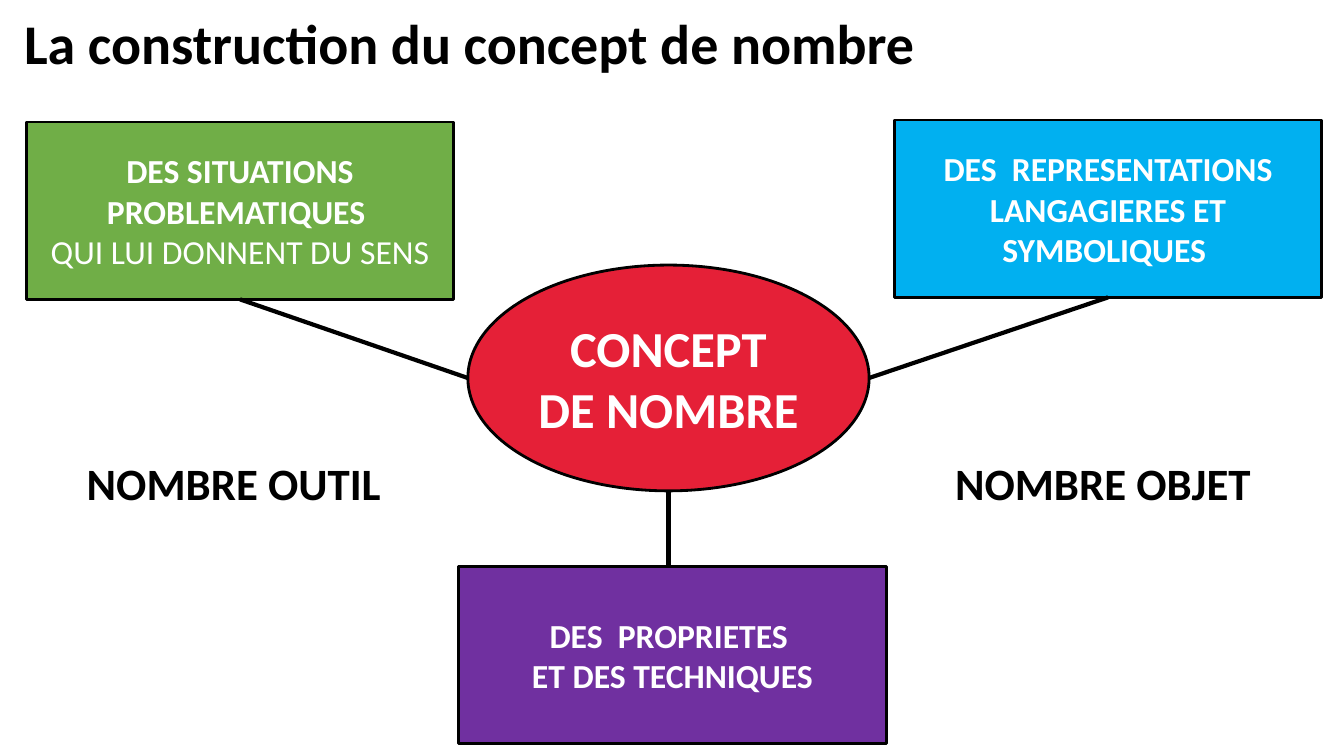
from lxml import etree
from pptx import Presentation
from pptx.dml.color import RGBColor
from pptx.enum.shapes import MSO_CONNECTOR, MSO_SHAPE
from pptx.enum.text import MSO_ANCHOR, PP_ALIGN
from pptx.oxml.ns import qn
from pptx.util import Inches, Pt

BLACK = RGBColor(0x00, 0x00, 0x00)
WHITE = RGBColor(0xFF, 0xFF, 0xFF)
RED = RGBColor(0xE5, 0x20, 0x37)
GREEN = RGBColor(0x70, 0xAE, 0x47)
BLUE = RGBColor(0x01, 0xB0, 0xF0)
PURPLE = RGBColor(0x70, 0x30, 0xA0)

# Content: each line is (text, bold)
TITLE = [("La construction du concept de nombre", True)]
CONCEPT = [("CONCEPT", True), ("DE NOMBRE", True)]
SITUATIONS = [("DES SITUATIONS PROBLEMATIQUES ", True),
              ("QUI LUI DONNENT DU SENS", False)]
REPRESENTATIONS = [("DES  REPRESENTATIONS LANGAGIERES ET SYMBOLIQUES ", True)]
PROPERTIES = [("DES  PROPRIETES ", True), ("ET DES TECHNIQUES", True)]

# Layout in inches
BOX_W, BOX_H = 4.24, 1.76
OVAL_X, OVAL_Y, OVAL_W, OVAL_H = 4.64, 2.63, 3.98, 2.24
BOXES = [  # left, top, fill, lines
    (0.26, 1.21, GREEN, SITUATIONS),
    (8.87, 1.19, BLUE, REPRESENTATIONS),
    (4.55, 5.62, PURPLE, PROPERTIES),
]
LABELS = [(0.38, "NOMBRE OUTIL"), (9, "NOMBRE OBJET")]
LABEL_Y, LABEL_W, LABEL_H = 4.47, 3.88, 0.64

prs = Presentation()
prs.slide_width, prs.slide_height = Inches(13.33), Inches(7.5)
s = prs.slides.add_slide(prs.slide_layouts[6])


def write(sp, lines, size, color=WHITE, align=PP_ALIGN.CENTER,
          anchor=MSO_ANCHOR.MIDDLE):
    tf = sp.text_frame
    tf.word_wrap = True
    tf.vertical_anchor = anchor
    for i, (text, bold) in enumerate(lines):
        p = tf.paragraphs[0] if i == 0 else tf.add_paragraph()
        p.alignment = align
        r = p.add_run()
        r.text = text
        r.font.name, r.font.size = "Calibri", Pt(size)
        r.font.bold, r.font.color.rgb = bold, color


def add_node(kind, x, y, w, h, fill, lines, size):
    sp = s.shapes.add_shape(kind, Inches(x), Inches(y), Inches(w), Inches(h))
    sp.shadow.inherit = False
    sp.fill.solid()
    sp.fill.fore_color.rgb = fill
    sp.line.color.rgb, sp.line.width = BLACK, Pt(2)
    write(sp, lines, size)
    return sp


def add_text(x, y, w, h, lines, size, align):
    sp = s.shapes.add_textbox(Inches(x), Inches(y), Inches(w), Inches(h))
    write(sp, lines, size, color=BLACK, align=align, anchor=MSO_ANCHOR.TOP)


def add_link(x1, y1, x2, y2):
    link = s.shapes.add_connector(MSO_CONNECTOR.STRAIGHT, Inches(x1),
                                  Inches(y1), Inches(x2), Inches(y2))
    link.line.color.rgb, link.line.width = BLACK, Pt(3)
    etree.SubElement(link._element.spPr, qn("a:effectLst"))
    return link


# Central concept and its three components
add_node(MSO_SHAPE.OVAL, OVAL_X, OVAL_Y, OVAL_W, OVAL_H, RED, CONCEPT, 36)
boxes = [add_node(MSO_SHAPE.RECTANGLE, x, y, BOX_W, BOX_H, fill, lines, 24)
         for x, y, fill, lines in BOXES]

# Links from the upper boxes to the sides of the oval
mid_x, mid_y = OVAL_X + OVAL_W / 2, OVAL_Y + OVAL_H / 2
for box, (x, y, *_), side_x in zip(boxes, BOXES, (OVAL_X, OVAL_X + OVAL_W)):
    link = add_link(x + BOX_W / 2, y + BOX_H, side_x, mid_y)
    link.begin_connect(box, 2)

# Vertical link down to the lower box
add_link(mid_x, OVAL_Y + OVAL_H, mid_x, BOXES[2][1])

# Side labels and title
for x, label in LABELS:
    add_text(x, LABEL_Y, LABEL_W, LABEL_H, [(label, True)], 32, PP_ALIGN.CENTER)
add_text(0.14, 0.04, 12.96, 0.77, TITLE, 40, PP_ALIGN.LEFT)

prs.save("out.pptx")
